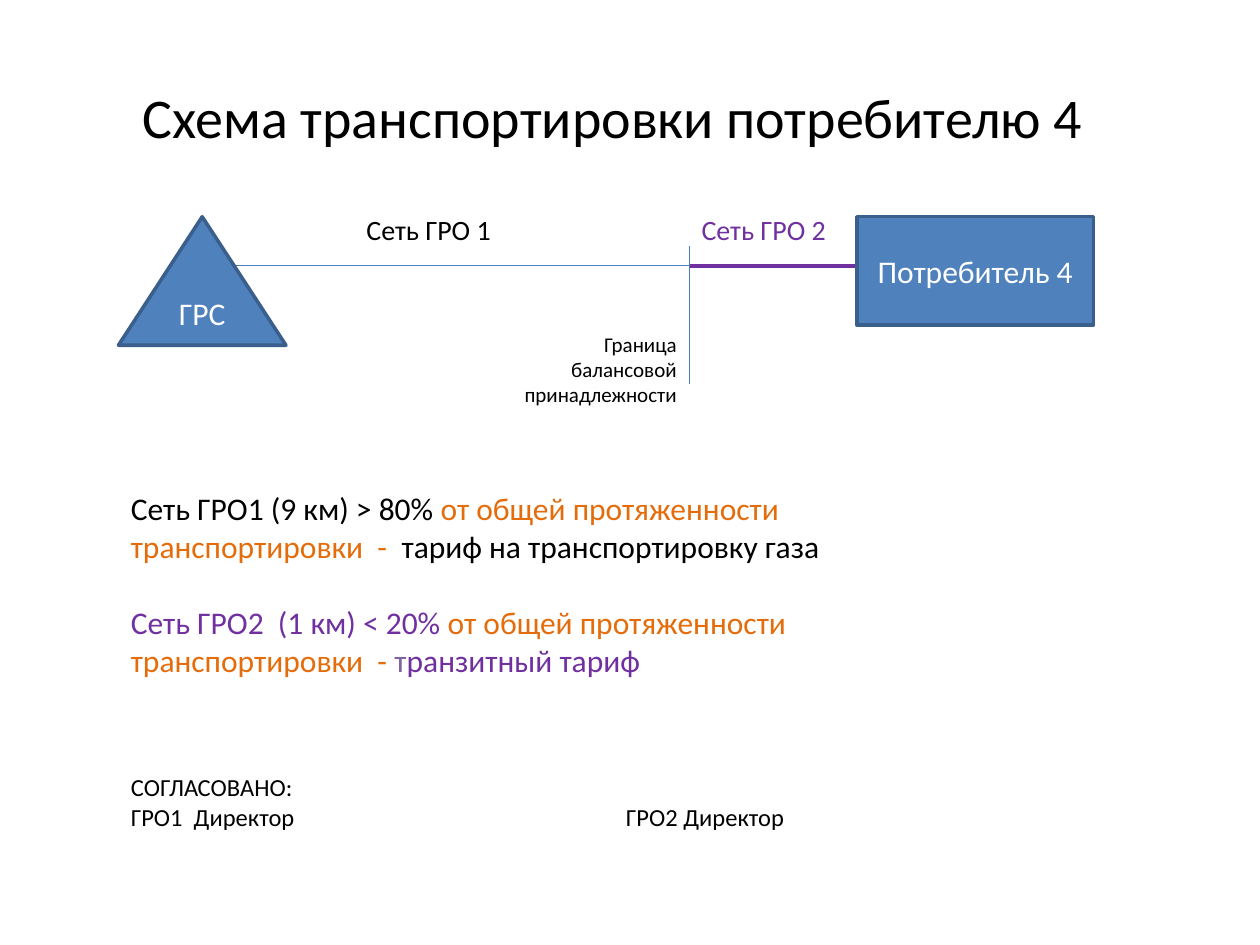
from dataclasses import dataclass

from lxml.etree import SubElement
from pptx import Presentation
from pptx.dml.color import RGBColor
from pptx.enum.shapes import MSO_CONNECTOR, MSO_SHAPE
from pptx.enum.text import MSO_ANCHOR, PP_ALIGN
from pptx.oxml.ns import qn
from pptx.util import Inches, Pt


@dataclass(frozen=True)
class Theme:
    font: str = "Calibri"
    black: str = "000000"
    white: str = "FFFFFF"
    blue: str = "4F81BD"
    outline: str = "3A5F8C"
    thin_line: str = "4B7EBC"
    purple: str = "7030A0"
    pale_purple: str = "8064A2"
    orange: str = "E46C0A"
    title: int = 32
    body: int = 18
    network: int = 16
    signature: int = 14
    note: int = 12


theme = Theme()


def style_paragraph(para, size, color, align=PP_ALIGN.LEFT):
    para.alignment = align
    para.font.name = theme.font
    para.font.size = Pt(size)
    para.font.color.rgb = RGBColor.from_string(color)


def add_text_box(shapes, left, top, width, height):
    """Add a wrapping text box, measured in inches, and return its text frame."""
    box = shapes.add_textbox(Inches(left), Inches(top), Inches(width), Inches(height))
    box.text_frame.word_wrap = True
    return box.text_frame


deck = Presentation()
deck.slide_width = Inches(10)
deck.slide_height = Inches(7.5)
page = deck.slides.add_slide(deck.slide_layouts[6])
shapes = page.shapes

pipe_y = 2.11
border_x = 5.47
consumer_x = 6.8

title = add_text_box(shapes, 0.23, 0.3, 9.27, 1.25)
title.vertical_anchor = MSO_ANCHOR.MIDDLE
title.text = "Схема транспортировки потребителю 4"
style_paragraph(title.paragraphs[0], theme.title, theme.black, PP_ALIGN.CENTER)

# Pipeline and balance border
for x1, y1, x2, y2, color, weight in (
    (1.87, pipe_y, border_x, pipe_y, theme.thin_line, 0.75),
    (border_x, pipe_y, consumer_x, pipe_y, theme.purple, 2),
    (border_x, 1.95, border_x, 3.05, theme.thin_line, 0.75),
):
    line = shapes.add_connector(
        MSO_CONNECTOR.STRAIGHT, Inches(x1), Inches(y1), Inches(x2), Inches(y2)
    )
    line.line.color.rgb = RGBColor.from_string(color)
    line.line.width = Pt(weight)
    SubElement(line._element.spPr, qn("a:effectLst"))

# Station and consumer
for preset, left, width, height, text in (
    (MSO_SHAPE.ISOSCELES_TRIANGLE, 0.94, 1.33, 1.02, "ГРС"),
    (MSO_SHAPE.RECTANGLE, consumer_x, 1.88, 0.86, "Потребитель 4"),
):
    node = shapes.add_shape(
        preset, Inches(left), Inches(1.72), Inches(width), Inches(height)
    )
    node.shadow.inherit = False
    node.fill.solid()
    node.fill.fore_color.rgb = RGBColor.from_string(theme.blue)
    node.line.color.rgb = RGBColor.from_string(theme.outline)
    node.line.width = Pt(2)
    node.text_frame.vertical_anchor = MSO_ANCHOR.MIDDLE
    node.text_frame.text = text
    style_paragraph(
        node.text_frame.paragraphs[0], theme.body, theme.white, PP_ALIGN.CENTER
    )

# Labels along the pipeline
for left, top, width, height, text, size, color, align in (
    (2.81, 1.64, 1.72, 0.37, "Сеть ГРО 1", theme.network, theme.black, PP_ALIGN.LEFT),
    (border_x, 1.64, 1.33, 0.37, "Сеть ГРО 2", theme.network, theme.purple,
     PP_ALIGN.LEFT),
    (3.83, 2.58, 1.64, 0.71, "Граница балансовой принадлежности", theme.note,
     theme.black, PP_ALIGN.RIGHT),
):
    label = add_text_box(shapes, left, top, width, height)
    label.text = text
    style_paragraph(label.paragraphs[0], size, color, align)

# Tariff rules and signatures: size, space before, coloured spans
paragraphs = (
    (theme.body, 0, (
        ("Сеть ГРО1 (9 км) > 80% ", theme.black),
        ("от общей протяженности транспортировки  -  ", theme.orange),
        ("тариф на транспортировку газа", theme.black),
    )),
    (theme.body, 22, (
        ("Сеть ГРО2  (1 км) < 20% ", theme.purple),
        ("от общей протяженности транспортировки  - ", theme.orange),
        ("т", theme.pale_purple),
        ("ранзитный тариф", theme.purple),
    )),
    (theme.signature, 53.7, (("СОГЛАСОВАНО:", theme.black),)),
    (theme.signature, 0, (("ГРО1  Директор\tГРО2 Директор", theme.black),)),
)
body = add_text_box(shapes, 0.94, 3.83, 7.13, 2.83)
for index, (size, space_before, spans) in enumerate(paragraphs):
    para = body.paragraphs[0] if index == 0 else body.add_paragraph()
    para.space_before = Pt(space_before)
    if any("\t" in text for text, _ in spans):
        tabs = SubElement(para._p.get_or_add_pPr(), qn("a:tabLst"))
        SubElement(tabs, qn("a:tab"), pos=str(Inches(3.93)), algn="l")
    style_paragraph(para, size, theme.black)
    for text, color in spans:
        span = para.add_run()
        span.text = text
        if color != theme.black:
            span.font.color.rgb = RGBColor.from_string(color)

deck.save("out.pptx")
